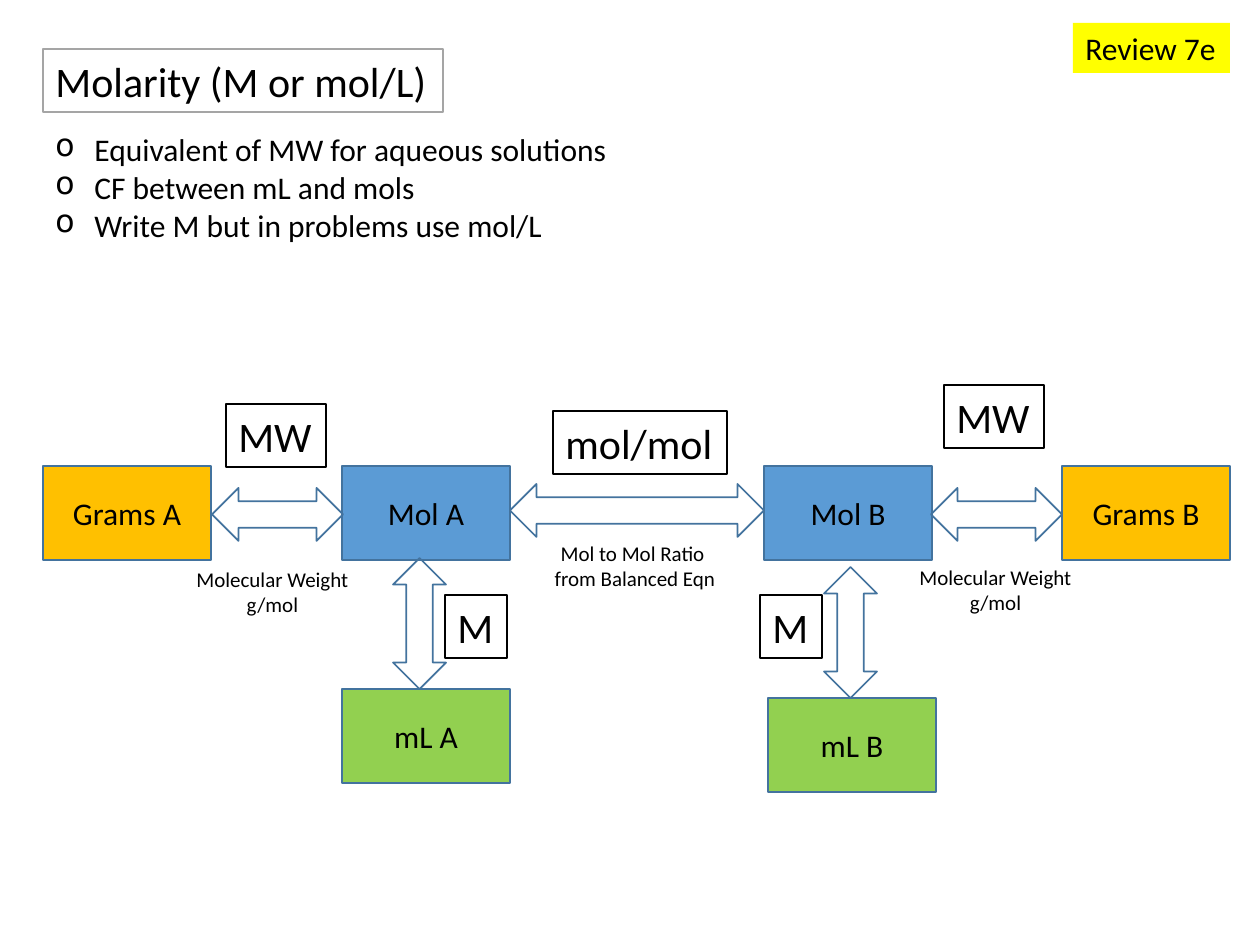
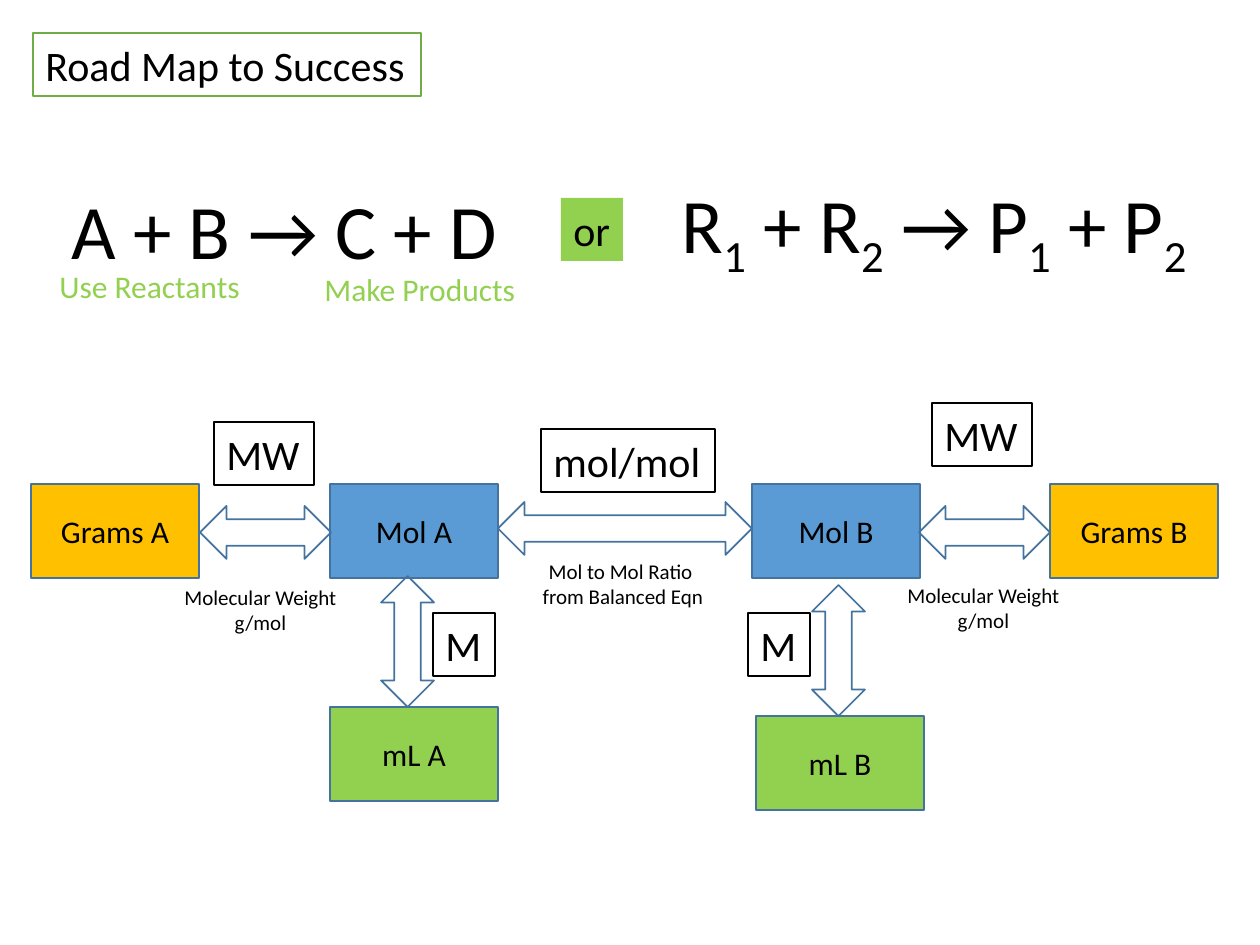
from lxml.etree import SubElement
from pptx import Presentation
from pptx.dml.color import RGBColor as RGB
from pptx.enum.shapes import MSO_SHAPE as Geo
from pptx.enum.text import MSO_ANCHOR as Anchor, MSO_AUTO_SIZE as Auto, PP_ALIGN as Align
from pptx.oxml.ns import qn
from pptx.util import Pt

PX = 914400 / 126
FONT = "Calibri"
INK = {
    "black": "000000", "white": "FFFFFF", "gray": "A5A5A5", "leaf": "70AD47",
    "blue": "5B9BD5", "edge": "43739E", "gold": "FFC000", "green": "92D050",
    "yellow": "FFFF00",
}

# Slide text: (text, box in px, format). Underscores enclose a subscript.
SLIDES = [
    {
        "title": ("Molarity (M or mol/L)", (43, 49, 400, 63), "gray"),
        "origin": (43, 466),
        "notes": [
            ("Equivalent of MW for aqueous solutions\nCF between mL and mols\n"
             "Write M but in problems use mol/L", (43, 124, 583, 127), {"bullet": "o"}),
            ("Review 7e", (1073, 23, 157, 50), {"fill": "yellow"}),
        ],
    },
    {
        "title": ("Road Map to Success", (33, 33, 388, 63), "leaf"),
        "origin": (31, 484),
        "notes": [
            ("A + B → C + D", (59, 176, 456, 106), {"size": 44}),
            ("R_1_ + R_2_ → P_1_ + P_2_", (669, 170, 549, 106), {"size": 44}),
            ("or", (561, 198, 62, 63), {"size": 24, "fill": "green"}),
            ("Use Reactants", (47, 261, 208, 50), {"color": "green"}),
            ("Make Products", (312, 264, 218, 50), {"color": "green"}),
        ],
    },
]

# Road map, measured from the corner of "Grams A"
NODE = (168, 94)
NODES = [
    ("Mol A", 299, 0, "blue"), ("Mol B", 721, 0, "blue"),
    ("Grams A", 0, 0, "gold"), ("Grams B", 1019, 0, "gold"),
    ("mL A", 299, 223, "green"), ("mL B", 725, 232, "green"),
]
THICK = 53
ARROWS = [  # left, top, length, turn
    (467, 18, 254, 0), (169, 22, 131, 0), (888, 22, 131, 0),
    (311, 131, 131, 90), (742, 140, 131, 90),
]
HINTS = [
    ("Mol to Mol Ratio \nfrom Balanced Eqn", 498, 68, 188),
    ("Molecular Weight\ng/mol", 140, 94, 179),
    ("Molecular Weight\ng/mol", 863, 92, 179),
]
FACTORS = [
    ("MW", 183, -62, 100), ("MW", 901, -81, 100), ("mol/mol", 510, -55, 174),
    ("M", 402, 129, 62), ("M", 717, 129, 62),
]
LABEL = 63


def emu(box):
    return [round(n * PX) for n in box]


def rgb(name):
    return RGB.from_string(INK[name])


def shape(room, box, geo=Geo.RECTANGLE, fill=None, line=None, turn=0):
    item = room.add_shape(geo, *emu(box))
    item.shadow.inherit = False
    item.rotation = turn
    if fill:
        item.fill.solid()
        item.fill.fore_color.rgb = rgb(fill)
    else:
        item.fill.background()
    if line:
        item.line.color.rgb = rgb(line)
        item.line.width = Pt(1)
    else:
        item.line.fill.background()
    return item


def write(room, text, box, size=18, color="black", fill=None, line=None,
          align=Align.LEFT, bullet=None, node=False):
    """Add text in a plain or filled box; a node is fixed in size and centred."""
    item = shape(room, box, fill=fill, line=line) if fill else room.add_textbox(*emu(box))
    frame = item.text_frame
    frame.word_wrap = node
    frame.auto_size = Auto.NONE if node else Auto.SHAPE_TO_FIT_TEXT
    frame.vertical_anchor = Anchor.MIDDLE if node else Anchor.TOP
    for i, row in enumerate(text.split("\n")):
        para = frame.add_paragraph() if i else frame.paragraphs[0]
        para.alignment = align
        if bullet:
            props = para._p.get_or_add_pPr()
            props.set("marL", str(round(39 * PX)))
            props.set("indent", str(round(-39 * PX)))
            SubElement(props, qn("a:buChar")).set("char", bullet)
        for j, part in enumerate(row.split("_")):
            if not part:
                continue
            run = para.add_run()
            run.text = part
            run.font.name = FONT
            run.font.size = Pt(size)
            run.font.color.rgb = rgb(color)
            if j % 2:
                run.font._element.set("baseline", "-25000")


def road(slide, left, top):
    """Draw the conversion map as one group."""
    room = slide.shapes.add_group_shape().shapes
    for text, x, y, fill in NODES:
        write(room, text, (left + x, top + y, *NODE), fill=fill, line="edge",
              align=Align.CENTER, node=True)
    for x, y, span, turn in ARROWS:
        shape(room, (left + x, top + y, span, THICK), Geo.LEFT_RIGHT_ARROW,
              line="edge", turn=turn)
    for text, x, y, wide in HINTS:
        write(room, text, (left + x, top + y, wide, LABEL), size=12, align=Align.CENTER)
    for text, x, y, wide in FACTORS:
        write(room, text, (left + x, top + y, wide, LABEL), size=24,
              fill="white", line="black")


def main():
    deck = Presentation()
    deck.slide_width, deck.slide_height = emu((1260, 945))
    for page in SLIDES:
        slide = deck.slides.add_slide(deck.slide_layouts[6])
        text, box, line = page["title"]
        write(slide.shapes, text, box, size=24, fill="white", line=line)
        for text, box, style in page["notes"]:
            write(slide.shapes, text, box, **style)
        road(slide, *page["origin"])
    deck.save("out.pptx")


if __name__ == "__main__":
    main()
